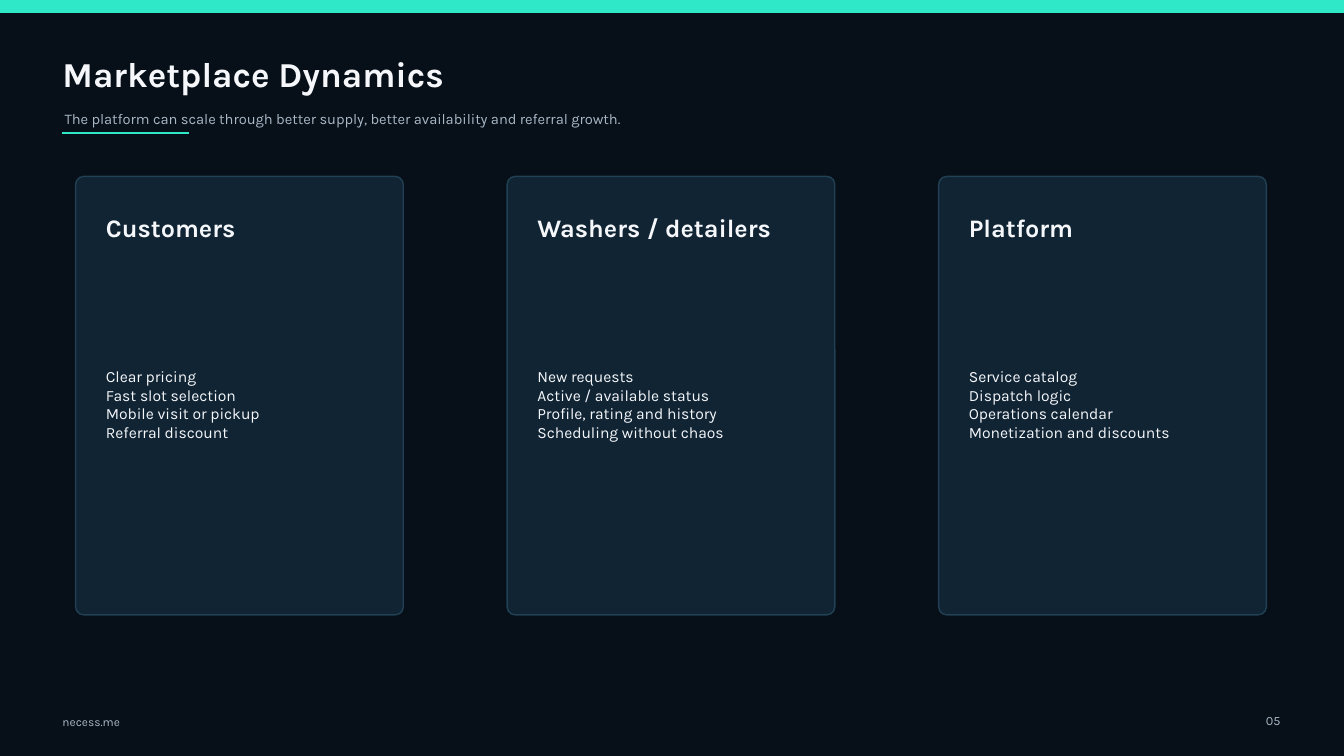
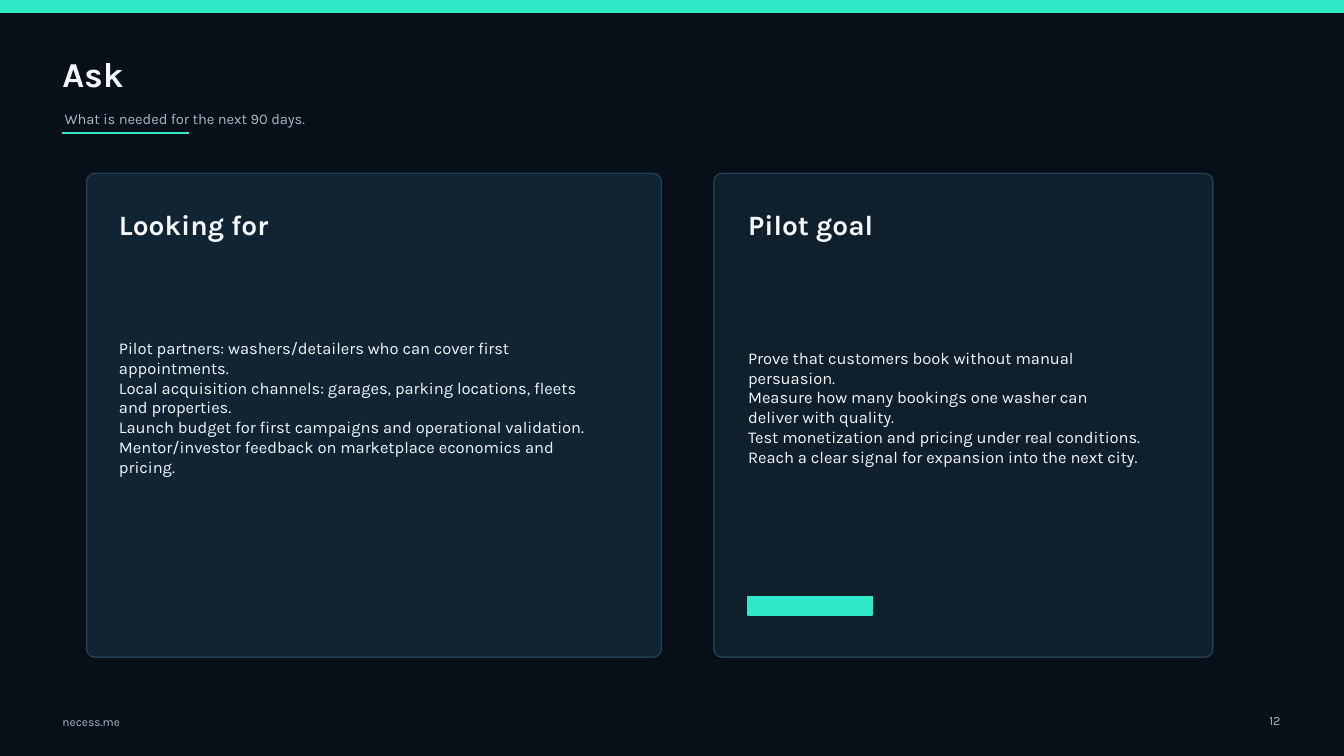
from dataclasses import dataclass

from lxml.etree import SubElement
from pptx import Presentation
from pptx.dml.color import RGBColor
from pptx.enum.shapes import MSO_CONNECTOR, MSO_SHAPE
from pptx.enum.text import MSO_ANCHOR, PP_ALIGN
from pptx.oxml.ns import qn
from pptx.util import Emu, Pt

EMU_PER_PX = 9144  # 100 px to the inch
SLIDE_W, SLIDE_H = 1333, 750
LEFT_MARGIN = 62
CARD_RADIUS = 8

FONT = "Karla"
NIGHT = "071018"
MINT = "2EE8C8"
WHITE = "F5F7FA"
MUTED = "A9B7C6"
NAVY = "102434"
SLATE = "0F1F2C"
BORDER = "25475C"


@dataclass
class CardStyle:
    """Card layout: offsets from the card's top, and text sizes in points."""
    top: int
    height: int
    body_offset: int
    body_height: int
    heading_size: float
    body_size: float
    heading_offset: int = 33
    heading_height: int = 36


PILLAR = CardStyle(top=175, height=435, body_offset=91, body_height=270,
                   heading_size=18, body_size=11.2)
PANEL = CardStyle(top=172, height=480, body_offset=96, body_height=272,
                  heading_size=20, body_size=11.8, heading_height=35)


def px(length):
    return Emu(length * EMU_PER_PX)


def box(*lengths):
    return [px(length) for length in lengths]


def rgb(color):
    return RGBColor.from_string(color)


def add_text(slide, bounds, text, size, color=WHITE, bold=False, align=PP_ALIGN.LEFT):
    """Add vertically centred text without insets; each line is a paragraph."""
    frame = slide.shapes.add_textbox(*box(*bounds)).text_frame
    frame.word_wrap = True
    frame.vertical_anchor = MSO_ANCHOR.MIDDLE
    frame.margin_left = frame.margin_top = frame.margin_right = frame.margin_bottom = 0
    frame.text = text
    for paragraph in frame.paragraphs:
        paragraph.alignment = align
        for run in paragraph.runs:
            font = run.font
            font.name, font.size, font.bold = FONT, Pt(size), bold
            font.color.rgb = rgb(color)


def add_panel(slide, preset, bounds, fill, border):
    panel = slide.shapes.add_shape(preset, *box(*bounds))
    panel.shadow.inherit = False
    panel.fill.solid()
    panel.fill.fore_color.rgb = rgb(fill)
    panel.line.color.rgb = rgb(border)
    panel.line.width = Pt(1)
    return panel


def add_accent_rule(slide, left, top, width):
    rule = slide.shapes.add_connector(
        MSO_CONNECTOR.STRAIGHT, *box(left, top, left + width, top))
    rule.line.color.rgb = rgb(MINT)
    rule.line.width = Pt(2)
    SubElement(rule._element.spPr, qn("a:effectLst"))


def add_card(slide, style, left, width, inset, text_width, heading, lines, fill=NAVY):
    card = add_panel(slide, MSO_SHAPE.ROUNDED_RECTANGLE,
                     (left, style.top, width, style.height), fill, BORDER)
    card.adjustments[0] = CARD_RADIUS / min(width, style.height)
    border_color = card.line._ln.find(".//" + qn("a:srgbClr"))
    SubElement(border_color, qn("a:alpha"), val="85000")

    text_left = left + inset
    add_text(slide, (text_left, style.top + style.heading_offset,
                     text_width, style.heading_height),
             heading, style.heading_size, bold=True)
    add_text(slide, (text_left, style.top + style.body_offset,
                     text_width, style.body_height),
             "\n".join(lines), style.body_size)


def add_base_slide(deck, title, subtitle, number):
    """Add a slide with the shared background, band, title block and footer."""
    slide = deck.slides.add_slide(deck.slide_layouts[6])
    slide.background.fill.solid()
    slide.background.fill.fore_color.rgb = rgb(NIGHT)
    add_panel(slide, MSO_SHAPE.RECTANGLE, (0, 0, SLIDE_W, 12), MINT, MINT)
    add_text(slide, (LEFT_MARGIN, 45, 880, 55), title, 25, bold=True)
    add_text(slide, (LEFT_MARGIN + 2, 100, 920, 36), subtitle, 10.5, MUTED)
    add_accent_rule(slide, LEFT_MARGIN, 132, 125)
    add_text(slide, (LEFT_MARGIN, 705, 140, 22), "necess.me", 8.5, MUTED)
    add_text(slide, (1225, 702, 45, 25), f"{number:02}", 9, MUTED, align=PP_ALIGN.RIGHT)
    return slide


def build_dynamics(deck):
    slide = add_base_slide(
        deck, "Marketplace Dynamics",
        "The platform can scale through better supply, better availability "
        "and referral growth.", 5)
    pillars = {
        "Customers": ["Clear pricing", "Fast slot selection",
                      "Mobile visit or pickup", "Referral discount"],
        "Washers / detailers": ["New requests", "Active / available status",
                                "Profile, rating and history",
                                "Scheduling without chaos"],
        "Platform": ["Service catalog", "Dispatch logic", "Operations calendar",
                     "Monetization and discounts"],
    }
    first_left, pitch = 75, 428
    for index, (heading, lines) in enumerate(pillars.items()):
        add_card(slide, PILLAR, first_left + index * pitch, 325, 30, 260, heading, lines)


def build_ask(deck):
    slide = add_base_slide(deck, "Ask", "What is needed for the next 90 days.", 12)
    add_card(slide, PANEL, 86, 570, 32, 465, "Looking for", [
        "Pilot partners: washers/detailers who can cover first appointments.",
        "Local acquisition channels: garages, parking locations, fleets and properties.",
        "Launch budget for first campaigns and operational validation.",
        "Mentor/investor feedback on marketplace economics and pricing.",
    ])
    goal_left, goal_inset = 708, 34
    add_card(slide, PANEL, goal_left, 495, goal_inset, 390, "Pilot goal", [
        "Prove that customers book without manual persuasion.",
        "Measure how many bookings one washer can deliver with quality.",
        "Test monetization and pricing under real conditions.",
        "Reach a clear signal for expansion into the next city.",
    ], fill=SLATE)
    add_panel(slide, MSO_SHAPE.RECTANGLE, (goal_left + goal_inset, 592, 123, 18), MINT, MINT)


def main():
    deck = Presentation()
    deck.slide_width, deck.slide_height = box(SLIDE_W, SLIDE_H)
    build_dynamics(deck)
    build_ask(deck)
    deck.save("out.pptx")


if __name__ == "__main__":
    main()
